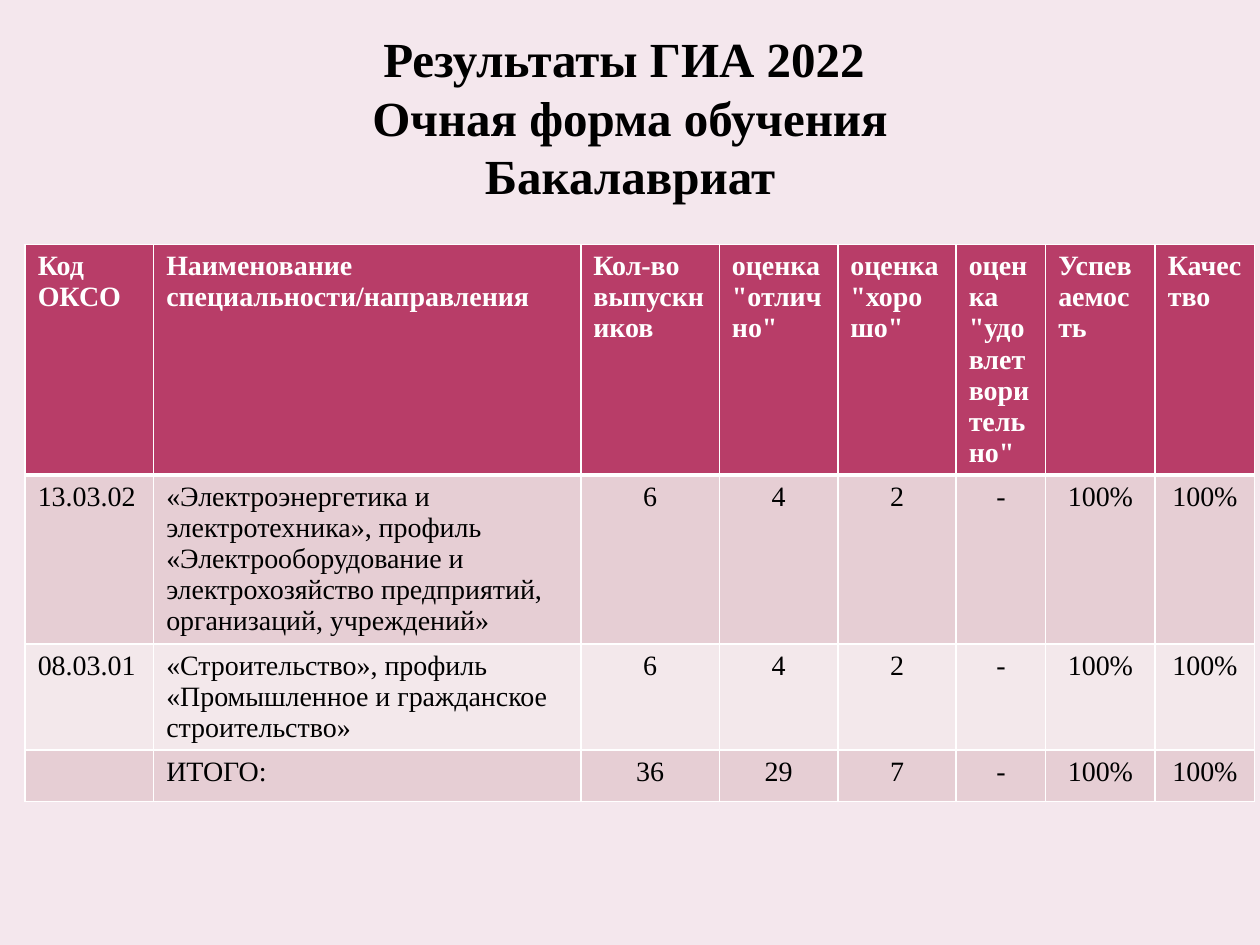
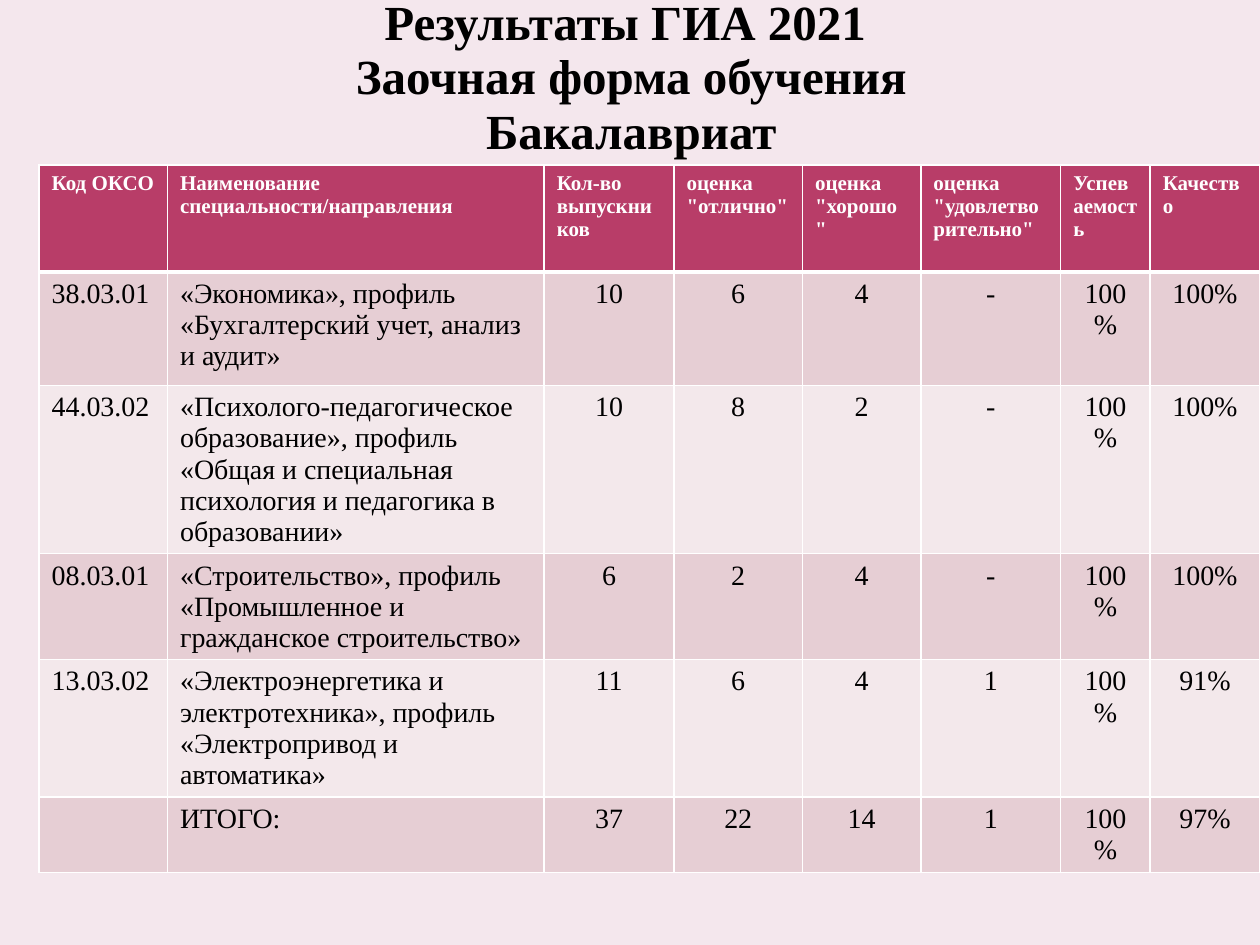
from dataclasses import dataclass

from lxml import etree
from pptx import Presentation
from pptx import util as u
from pptx.dml.color import RGBColor
from pptx.enum import text
from pptx.oxml.ns import qn

# ---- Content ----
HEADINGS = ["Код ОКСО", "Наименование специальности/направления", "Кол-во выпускников",
            'оценка "отлично"', 'оценка "хорошо"', 'оценка "удовлетворительно"',
            "Успеваемость", "Качество"]
BUILDING = "«Строительство», профиль «Промышленное и гражданское строительство»"

RESULTS = [
    {
        "title": ["Результаты ГИА 2022 ", "Очная форма обучения", "Бакалавриат"],
        "title_at": (0.5, 0.3),
        "title_spacing": 1.0,
        "table_at": (0.2, 1.94),
        "heading_size": 16,
        "columns": [1.02, 3.39, 1.1, 0.94, 0.94, 0.71, 0.87, 0.79],
        "rows": [1.83, 1.34, 0.84, 0.41],
        "programmes": [
            ("13.03.02", "«Электроэнергетика и электротехника», профиль "
             "«Электрооборудование и электрохозяйство предприятий, организаций, учреждений»",
             "6", "4", "2", "-", "100%", "100%"),
            ("08.03.01", BUILDING, "6", "4", "2", "-", "100%", "100%"),
            ("", "ИТОГО:", "36", "29", "7", "-", "100%", "100%"),
        ],
    },
    {
        "title": ["Результаты ГИА 2021 ", "Заочная форма обучения", "Бакалавриат"],
        "title_at": (0.51, 0),
        "title_spacing": 0.92,  # keeps the last line clear of the table
        "table_at": (0.31, 1.31),
        "heading_size": 12,
        "columns": [1.02, 2.99, 1.03, 1.02, 0.94, 1.11, 0.71, 0.87],
        "rows": [0.85, 0.9, 1.33, 0.84, 1.09, 0.6],
        "programmes": [
            ("38.03.01", "«Экономика», профиль «Бухгалтерский учет, анализ и аудит»",
             "10", "6", "4", "-", "100%", "100%"),
            ("44.03.02", "«Психолого-педагогическое образование», профиль "
             "«Общая и специальная психология и педагогика в образовании»",
             "10", "8", "2", "-", "100%", "100%"),
            ("08.03.01", BUILDING, "6", "2", "4", "-", "100%", "100%"),
            ("13.03.02", "«Электроэнергетика и электротехника», профиль "
             "«Электропривод и автоматика»", "11", "6", "4", "1", "100%", "91%"),
            ("", "ИТОГО:", "37", "22", "14", "1", "100%", "97%"),
        ],
    },
]


# ---- Shared look ----
@dataclass(frozen=True)
class Theme:
    font: str = "Times New Roman"
    background: str = "F4E7ED"
    heading: str = "B83D68"
    bands: tuple = ("E6CED4", "F3E8EB")
    ink: str = "000000"
    light: str = "FFFFFF"
    title_size: int = 28
    body_size: int = 16
    rule: int = 1
    heading_rule: int = 3


THEME = Theme()
TITLE_SIZE = (9, 1.25)
LEFT_COLUMNS = 2  # code and programme name; the figures after them are centred


def paint(fill, color):
    fill.solid()
    fill.fore_color.rgb = RGBColor.from_string(color)


def write(frame, words, *, size=THEME.body_size, color=THEME.ink, bold=False,
          centred=False, spacing=None):
    """Put words in the frame's first paragraph; a vertical tab breaks the line."""
    paragraph = frame.paragraphs[0]
    paragraph.text = words
    paragraph.alignment = text.PP_ALIGN.CENTER if centred else text.PP_ALIGN.LEFT
    paragraph.line_spacing = spacing
    for run in paragraph.runs:
        run.font.name = THEME.font
        run.font.size = u.Pt(size)
        run.font.bold = bold
        run.font.color.rgb = RGBColor.from_string(color)


def rule_cell(cell, top, bottom):
    """Draw the four borders; they precede the fill in the cell properties."""
    widths = {"lnL": THEME.rule, "lnR": THEME.rule, "lnT": top, "lnB": bottom}
    properties = cell._tc.get_or_add_tcPr()
    for place, (side, width) in enumerate(widths.items()):
        line = etree.Element(qn(f"a:{side}"), w=str(u.Pt(width)))
        solid = etree.SubElement(line, qn("a:solidFill"))
        etree.SubElement(solid, qn("a:srgbClr"), val=THEME.light)
        properties.insert(place, line)


def add_title(slide, result):
    title = slide.shapes.title
    title.left, title.top = map(u.Inches, result["title_at"])
    title.width, title.height = map(u.Inches, TITLE_SIZE)
    title.text_frame.auto_size = text.MSO_AUTO_SIZE.NONE
    title.text_frame.vertical_anchor = text.MSO_ANCHOR.MIDDLE
    write(title.text_frame, "\v".join(result["title"]), size=THEME.title_size,
          bold=True, centred=True, spacing=result["title_spacing"])


def add_results(slide, result):
    columns, rows = result["columns"], result["rows"]
    left, top = result["table_at"]
    extent = (left, top, sum(columns), sum(rows))
    table = slide.shapes.add_table(len(rows), len(columns), *map(u.Inches, extent)).table
    for column, width in zip(table.columns, columns):
        column.width = u.Inches(width)
    for row, height in zip(table.rows, rows):
        row.height = u.Inches(height)

    for r, entries in enumerate([HEADINGS, *result["programmes"]]):
        is_heading = r == 0
        fill = THEME.heading if is_heading else THEME.bands[(r - 1) % 2]
        for c, entry in enumerate(entries):
            cell = table.cell(r, c)
            paint(cell.fill, fill)
            rule_cell(cell, top=THEME.heading_rule if r == 1 else THEME.rule,
                      bottom=THEME.heading_rule if is_heading else THEME.rule)
            if is_heading:
                write(cell.text_frame, entry, size=result["heading_size"],
                      color=THEME.light, bold=True)
            elif entry:
                write(cell.text_frame, entry, centred=c >= LEFT_COLUMNS)


def main():
    deck = Presentation()
    deck.slide_width, deck.slide_height = u.Inches(10), u.Inches(7.5)
    paint(deck.slide_master.background.fill, THEME.background)
    title_only = deck.slide_layouts.get_by_name("Title Only")
    for result in RESULTS:
        slide = deck.slides.add_slide(title_only)
        add_title(slide, result)
        add_results(slide, result)
    deck.save("out.pptx")


if __name__ == "__main__":
    main()
